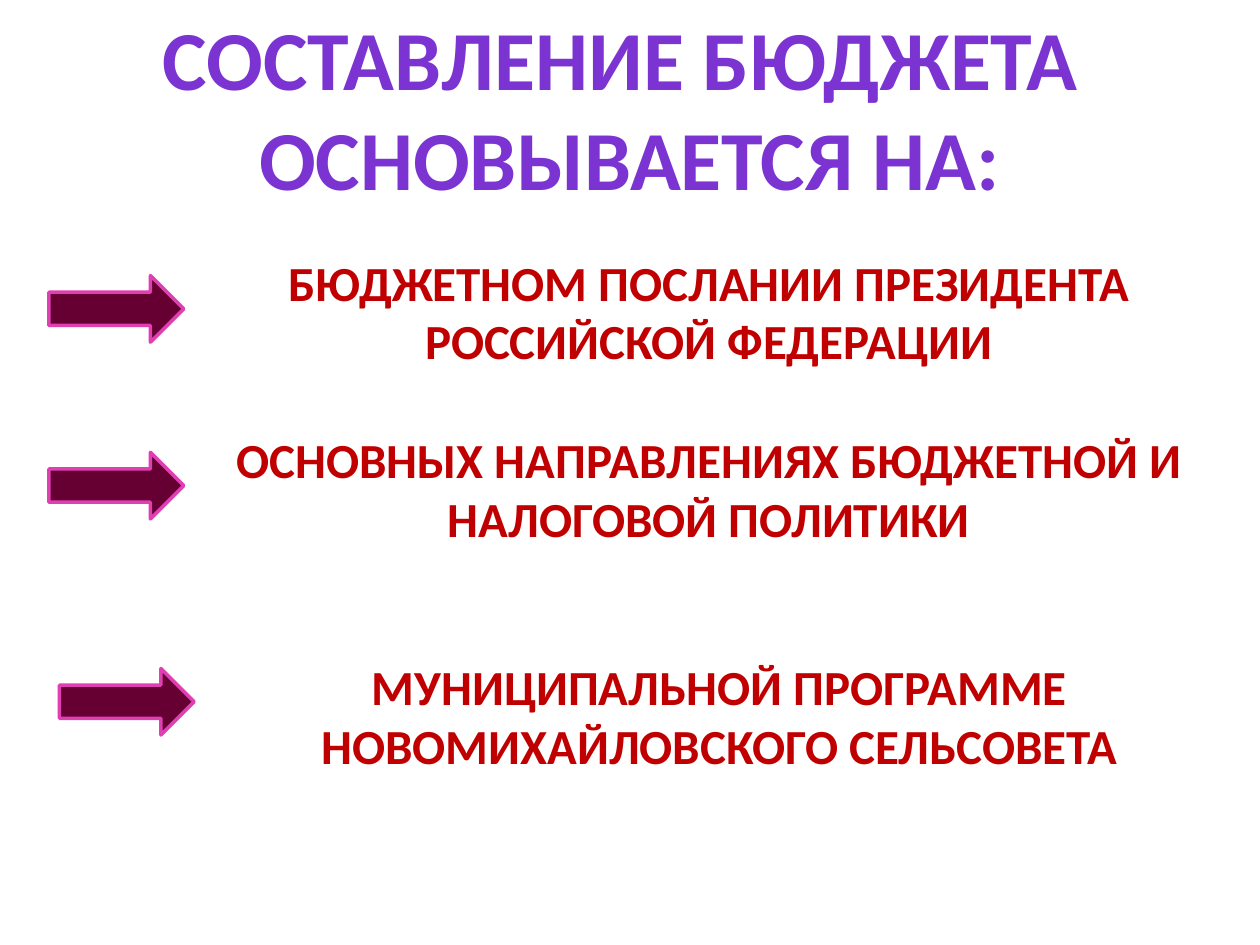
"""Build a slide listing what the budget is based on."""
from pptx import Presentation
from pptx.dml.color import RGBColor
from pptx.enum.shapes import MSO_SHAPE
from pptx.enum.text import MSO_AUTO_SIZE, PP_ALIGN
from pptx.util import Pt

COLOURS = {
    "title": "7B34D2",
    "basis": "C00000",
    "arrow": "660033",
    "arrow_edge": "DF3FB1",
}
TITLE = "СОСТАВЛЕНИЕ БЮДЖЕТА \nОСНОВЫВАЕТСЯ НА:"
BASES = [
    (28, 157.5, 140.5, "БЮДЖЕТНОМ ПОСЛАНИИ ПРЕЗИДЕНТА РОССИЙСКОЙ ФЕДЕРАЦИИ"),
    (28, 258.5, 242, "ОСНОВНЫХ НАПРАВЛЕНИЯХ БЮДЖЕТНОЙ И НАЛОГОВОЙ ПОЛИТИКИ"),
    (34, 382, 371.5, "МУНИЦИПАЛЬНОЙ ПРОГРАММЕ НОВОМИХАЙЛОВСКОГО СЕЛЬСОВЕТА"),
]
TEXT_OFFSET = 90


def colour(name):
    """Return the named colour."""
    return RGBColor.from_string(COLOURS[name])


def add_text(page, left, top, width, height, text, size, colour_name):
    """Add a centred bold text box."""
    box = page.shapes.add_textbox(Pt(left), Pt(top), Pt(width), Pt(height))
    frame = box.text_frame
    frame.text = text
    frame.word_wrap = True
    frame.auto_size = MSO_AUTO_SIZE.SHAPE_TO_FIT_TEXT
    for para in frame.paragraphs:
        para.alignment = PP_ALIGN.CENTER
        for span in para.runs:
            span.font.name = "Calibri"
            span.font.size = Pt(size)
            span.font.bold = True
            span.font.color.rgb = colour(colour_name)


def add_arrow(page, left, top):
    """Add a block arrow pointing right."""
    arrow = page.shapes.add_shape(
        MSO_SHAPE.RIGHT_ARROW, Pt(left), Pt(top), Pt(77), Pt(38)
    )
    arrow.shadow.inherit = False
    arrow.fill.solid()
    arrow.fill.fore_color.rgb = colour("arrow")
    arrow.line.color.rgb = colour("arrow_edge")
    arrow.line.width = Pt(2)


def main():
    """Create the deck and save it."""
    deck = Presentation()
    deck.slide_width, deck.slide_height = Pt(720), Pt(540)
    page = deck.slides.add_slide(deck.slide_layouts[6])
    add_text(page, 0, 0, 720, 124, TITLE, 48, "title")
    for left, arrow_top, text_top, text in BASES:
        add_arrow(page, left, arrow_top)
        add_text(page, left + TEXT_OFFSET, text_top, 574, 75, text, 28, "basis")
    deck.save("out.pptx")


if __name__ == "__main__":
    main()
